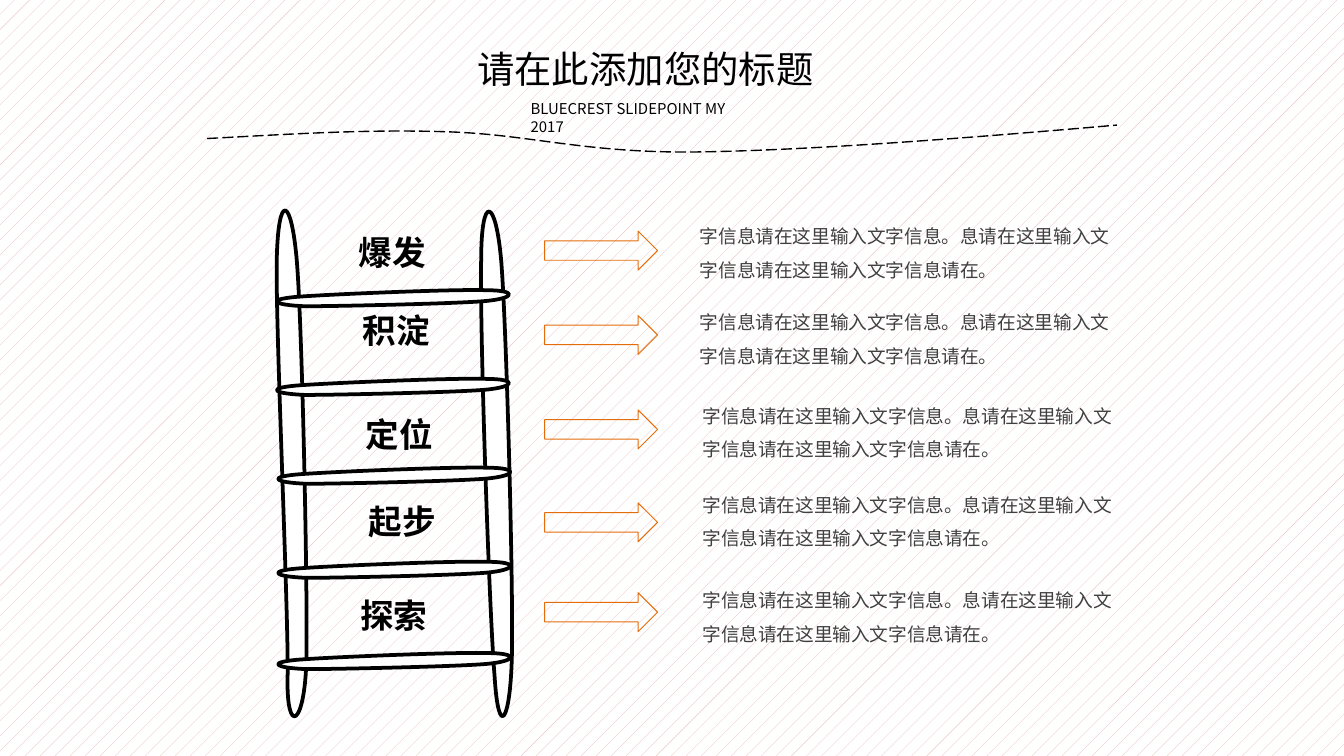
from pptx import Presentation
from pptx.dml.color import RGBColor as RGB
from pptx.enum.dml import MSO_LINE, MSO_PATTERN
from pptx.enum.shapes import MSO_SHAPE
from pptx.enum.text import MSO_ANCHOR, MSO_AUTO_SIZE, PP_ALIGN
from pptx.oxml.ns import qn
from pptx.util import Pt
from lxml import etree

BLACK = RGB(0x00, 0x00, 0x00)
WHITE = RGB(0xFF, 0xFF, 0xFF)
GREY = RGB(0x40, 0x40, 0x40)
ORANGE = RGB(0xE4, 0x6C, 0x0A)
PINK = RGB(0xE6, 0xB9, 0xB8)
FONT = "Noto Sans CJK SC"
STEPS = 20

TITLE = {"size": Pt(20), "bold": False}
SUBTITLE = {"size": Pt(8), "bold": False}
LABEL = {"size": Pt(18), "bold": True}
BODY = {"size": Pt(10), "bold": False}
BODY_TEXT = "字信息请在这里输入文字信息。息请在这里输入文字信息请在这里输入文字信息请在。"

WAVE = [(0, 7.2), (42.4, 5), (84.8, 2.1), (128.8, 3.6),
        (172.7, 5), (202.2, 15.1), (262, 14.4),
        (321.7, 13.6), (404.5, 7.2), (487.3, 0)]
LEFT_RAIL = [(0.3, 26.7), (-0.4, 63.4), (6.8, 218.2), (6.1, 249.9),
             (5.4, 281.6), (15.4, 276.5), (16.2, 239.8),
             (16.9, 203.1), (14, 63.4), (11.1, 27.4),
             (8.2, -7.9), (1, -10.8), (0.3, 26.7)]
RIGHT_RAIL = [(109.8, 26.7), (109, 63.4), (114.1, 214.6), (117, 249.2),
              (119.1, 284.4), (125.6, 273.6), (126.3, 236.9),
              (127, 199.5), (123.4, 62.7), (120.6, 27.4),
              (117.7, -7.2), (109.8, -10), (109.8, 26.7)]
RUNG = [(113.4, 0), (96.8, -0.7), (27.7, 2.2), (11.1, 3.6),
        (-4.7, 5), (-1.1, 7.9), (16.2, 8.6),
        (32.7, 8.6), (96.8, 7.2), (112.6, 5.8),
        (129.2, 4.3), (129.9, 0), (113.4, 0)]
RUNG_OFFSETS = [(0, 236.9), (0, 188), (0, 137.6), (-0.7, 90), (-0.7, 42.5)]

# label, row top, label x, label y, arrow y, body x
ROWS = [("爆发", 110.9, 0, 9.6, 12.9, 198),
        ("积淀", 157, 2.1, 5.7, 12, 198),
        ("定位", 207.2, 3.7, 11.2, 12.4, 199.4),
        ("起步", 254.9, 5.2, 10.1, 14.5, 199.4),
        ("探索", 306, 0.7, 9.4, 11.5, 199.4)]


def curve_extent(nodes, k):
    values = []
    for i in range(0, len(nodes) - 1, 3):
        a, b, c, d = (node[k] for node in nodes[i:i + 4])
        for n in range(STEPS + 1):
            t = n / STEPS
            u = 1 - t
            values.append(u**3 * a + 3 * u * u * t * b + 3 * u * t * t * c + t**3 * d)
    return min(values), max(values)


def add_curve(s, left, top, nodes, width, closed=True):
    (x0, x1), (y0, y1) = curve_extent(nodes, 0), curve_extent(nodes, 1)
    fb = s.shapes.build_freeform(Pt(left + x0), Pt(top + y0))
    fb.add_line_segments([(Pt(left + x1), Pt(top + y1))], close=closed)
    sp = fb.convert_to_shape()
    outline = sp._element.find(".//" + qn("a:path"))
    start, line = outline[0], outline[1]
    bezier = [[nodes[0]]] + [nodes[i:i + 3] for i in range(1, len(nodes), 3)]
    for group in bezier:
        tag = "a:moveTo" if len(group) == 1 else "a:cubicBezTo"
        step = etree.Element(qn(tag))
        for x, y in group:
            etree.SubElement(step, qn("a:pt"), x=str(Pt(x - x0)), y=str(Pt(y - y0)))
        line.addprevious(step)
    outline.remove(start)
    outline.remove(line)
    sp.shadow.inherit = False
    if closed:
        sp.fill.solid()
        sp.fill.fore_color.rgb = WHITE
    else:
        sp.fill.background()
    sp.line.color.rgb = BLACK
    sp.line.width = Pt(width)
    return sp


def set_text(sp, text, fmt, color=BLACK, align=PP_ALIGN.LEFT, spacing=1.0):
    tf = sp.text_frame
    tf.word_wrap = True
    tf.auto_size = MSO_AUTO_SIZE.SHAPE_TO_FIT_TEXT
    tf.vertical_anchor = MSO_ANCHOR.TOP
    p = tf.paragraphs[0]
    p.alignment = align
    p.line_spacing = spacing
    r = p.add_run()
    r.text = text
    for name, value in fmt.items():
        setattr(r.font, name, value)
    r.font.color.rgb = color
    r.font.name = FONT
    etree.SubElement(r.font._element, qn("a:ea"), typeface=FONT)


def add_text(s, left, top, width, height, text, fmt, **kw):
    sp = s.shapes.add_textbox(Pt(left), Pt(top), Pt(width), Pt(height))
    set_text(sp, text, fmt, **kw)


def add_header(s, left, top):
    title = s.shapes.title
    place = {"left": left + 137.4, "top": top, "width": 200.9, "height": 31.7}
    for name, value in place.items():
        setattr(title, name, Pt(value))
    set_text(title, "请在此添加您的标题", TITLE)
    wave = add_curve(s, left, top + 46.1, WAVE, 0.75, closed=False)
    wave.line.dash_style = MSO_LINE.LONG_DASH
    add_text(s, left + 166.2, top + 28.8, 131.8, 17.3,
             "BLUECREST SLIDEPOINT MY 2017", SUBTITLE)


def add_ladder(s, left, top):
    for rail in (LEFT_RAIL, RIGHT_RAIL):
        add_curve(s, left, top, rail, 2)
    for dx, dy in RUNG_OFFSETS:
        add_curve(s, left + dx, top + dy, RUNG, 2)


def add_row(s, left, top, label, label_x, label_y, arrow_y, body_x):
    add_text(s, left + label_x, top + label_y, 80.6, 28.8, label, LABEL,
             align=PP_ALIGN.CENTER)
    arrow = s.shapes.add_shape(MSO_SHAPE.RIGHT_ARROW, Pt(left + 121.9),
                               Pt(top + arrow_y), Pt(60.5), Pt(20.9))
    arrow.shadow.inherit = False
    arrow.fill.background()
    arrow.line.color.rgb = ORANGE
    arrow.line.width = Pt(0.5)
    add_text(s, left + body_x, top, 239.8, 43.9, BODY_TEXT, BODY,
             color=GREY, spacing=1.5)


def main():
    prs = Presentation()
    prs.slide_width, prs.slide_height = Pt(720), Pt(405)
    s = prs.slides.add_slide(prs.slide_layouts[5])
    fill = s.background.fill
    fill.patterned()
    fill.pattern = MSO_PATTERN.PERCENT_10
    fill.fore_color.rgb = PINK
    fill.back_color.rgb = WHITE
    add_ladder(s, 148, 113)
    add_header(s, 111, 20.9)
    for label, top, *offsets in ROWS:
        add_row(s, 169.9, top, label, *offsets)
    prs.save("out.pptx")


if __name__ == "__main__":
    main()
